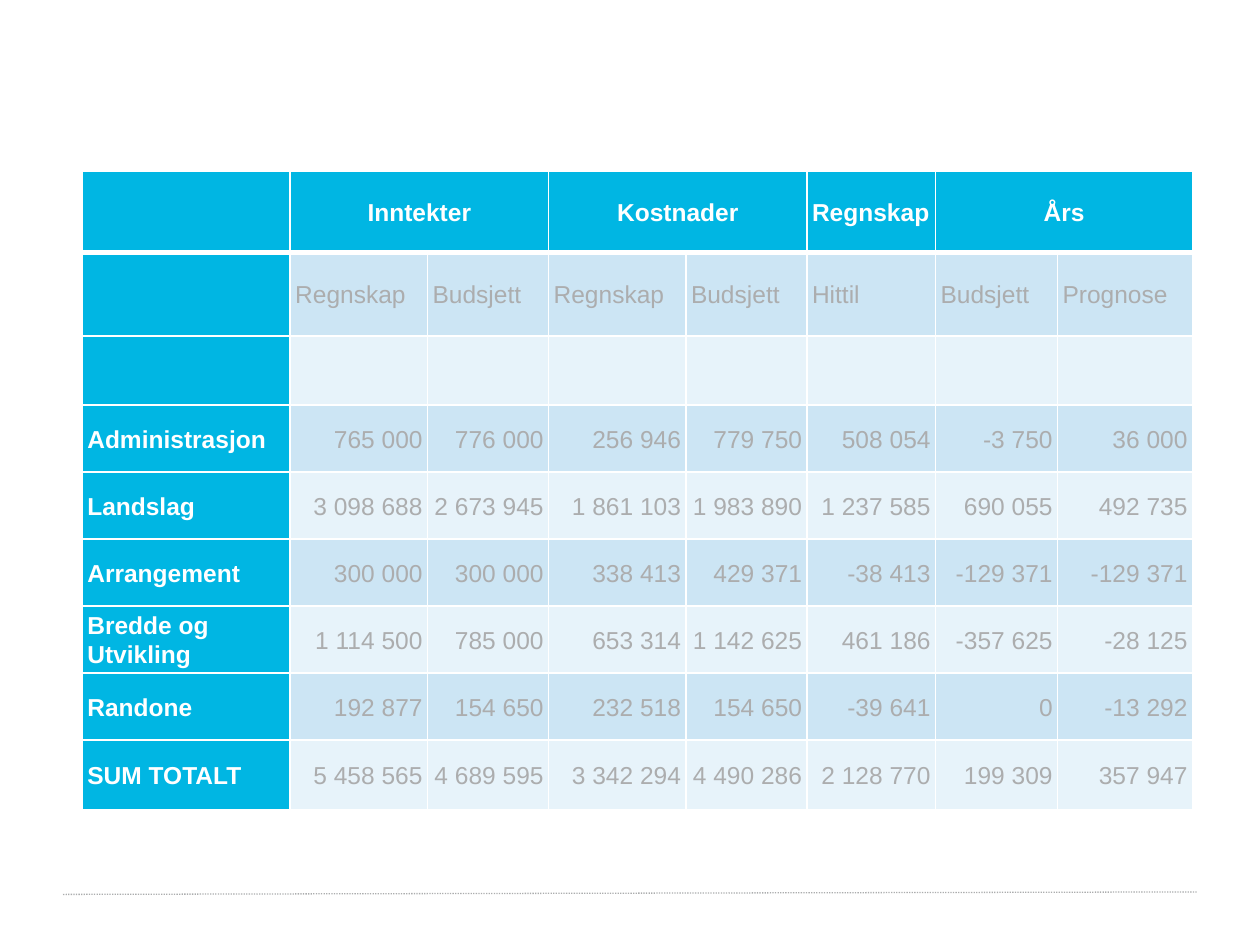
from dataclasses import dataclass

from lxml import etree
from pptx import Presentation
from pptx.dml.color import RGBColor
from pptx.enum import dml, shapes, text
from pptx.oxml import ns
from pptx.util import Cm, Pt

COLORS = {
    "header": "00B6E3",
    "dark_band": "CCE5F4",
    "light_band": "E7F3FA",
    "white": "FFFFFF",
    "gray": "ACADAE",
}
COLUMN_WIDTHS = [4.19, 2.77, 2.44, 2.77, 2.44, 2.59, 2.46, 2.72]
ROW_HEIGHTS = [1.63, 1.68, 1.4] + [1.35] * 5 + [1.4]
LEFT, CENTER, RIGHT = text.PP_ALIGN.LEFT, text.PP_ALIGN.CENTER, text.PP_ALIGN.RIGHT


@dataclass
class Group:
    title: str
    column: int
    span: int = 1


@dataclass
class Department:
    name: str
    amounts: list[int]


GROUPS = [
    Group("Inntekter", 1, 2),
    Group("Kostnader", 3, 2),
    Group("Regnskap", 5),
    Group("Års", 6, 2),
]
SUBTITLES = ["Regnskap", "Budsjett", "Regnskap", "Budsjett", "Hittil", "Budsjett", "Prognose"]
DEPARTMENTS = [
    Department("Administrasjon", [765000, 776000, 256946, 779750, 508054, -3750, 36000]),
    Department("Landslag", [3098688, 2673945, 1861103, 1983890, 1237585, 690055, 492735]),
    Department("Arrangement", [300000, 300000, 338413, 429371, -38413, -129371, -129371]),
    Department("Bredde og Utvikling", [1114500, 785000, 653314, 1142625, 461186, -357625, -28125]),
    Department("Randone", [192877, 154650, 232518, 154650, -39641, 0, -13292]),
    Department("SUM TOTALT", [5458565, 4689595, 3342294, 4490286, 2128770, 199309, 357947]),
]


def color(name: str) -> RGBColor:
    return RGBColor.from_string(COLORS[name])


def add_borders(cell, top: float, bottom: float) -> None:
    properties = cell._tc.get_or_add_tcPr()
    for side, width in {"L": 1, "R": 1, "T": top, "B": bottom}.items():
        line = etree.SubElement(properties, ns.qn(f"a:ln{side}"), w=str(Pt(width)))
        fill = etree.SubElement(line, ns.qn("a:solidFill"))
        etree.SubElement(fill, ns.qn("a:srgbClr"), val=COLORS["white"])


def style_cell(cell, row: int, column: int) -> None:
    add_borders(cell, top=3 if row == 1 else 1, bottom=3 if row == 0 else 1)
    band = "dark_band" if row % 2 else "light_band"
    cell.fill.solid()
    cell.fill.fore_color.rgb = color("header" if row == 0 or column == 0 else band)
    cell.vertical_anchor = text.MSO_ANCHOR.MIDDLE
    cell.margin_left = cell.margin_right = Cm(0.1)
    cell.margin_top = cell.margin_bottom = 0


def write_cell(cell, words: str, alignment: text.PP_ALIGN, heading: bool) -> None:
    para = cell.text_frame.paragraphs[0]
    para.text = words
    para.alignment = alignment
    para.line_spacing = 1.07
    para.font.name = "Arial"
    para.font.size = Pt(14)
    para.font.bold = heading
    para.font.color.rgb = color("white" if heading else "gray")


def add_budget_table(page) -> None:
    frame = page.shapes.add_table(
        len(ROW_HEIGHTS), len(COLUMN_WIDTHS), Cm(1.66), Cm(3.46),
        Cm(sum(COLUMN_WIDTHS)), Cm(sum(ROW_HEIGHTS)),
    )
    table = frame.table
    table.first_col = True
    for column, width in zip(table.columns, COLUMN_WIDTHS):
        column.width = Cm(width)
    for row, height in zip(table.rows, ROW_HEIGHTS):
        row.height = Cm(height)
    for row in range(len(ROW_HEIGHTS)):
        for column in range(len(COLUMN_WIDTHS)):
            style_cell(table.cell(row, column), row, column)

    for group in GROUPS:
        cell = table.cell(0, group.column)
        if group.span > 1:
            cell.merge(table.cell(0, group.column + group.span - 1))
        write_cell(cell, group.title, CENTER if group.span > 1 else LEFT, True)
    for column, subtitle in enumerate(SUBTITLES, start=1):
        write_cell(table.cell(1, column), subtitle, LEFT, False)
    for row, department in enumerate(DEPARTMENTS, start=3):
        write_cell(table.cell(row, 0), department.name, LEFT, True)
        for column, amount in enumerate(department.amounts, start=1):
            write_cell(table.cell(row, column), f"{amount:,}".replace(",", " "), RIGHT, False)


def add_footer_line(page) -> None:
    rule = page.shapes.add_connector(
        shapes.MSO_CONNECTOR.STRAIGHT, Cm(1.27), Cm(18.03), Cm(24.13), Cm(17.98)
    )
    rule.line.color.rgb = color("gray")
    rule.line.width = Pt(0.75)
    rule.line.dash_style = dml.MSO_LINE.ROUND_DOT
    etree.SubElement(rule._element.spPr, ns.qn("a:effectLst"))


def main() -> None:
    deck = Presentation()
    deck.slide_width, deck.slide_height = Cm(25.4), Cm(19.05)
    page = deck.slides.add_slide(deck.slide_layouts[6])
    add_footer_line(page)
    add_budget_table(page)
    deck.save("out.pptx")


if __name__ == "__main__":
    main()
